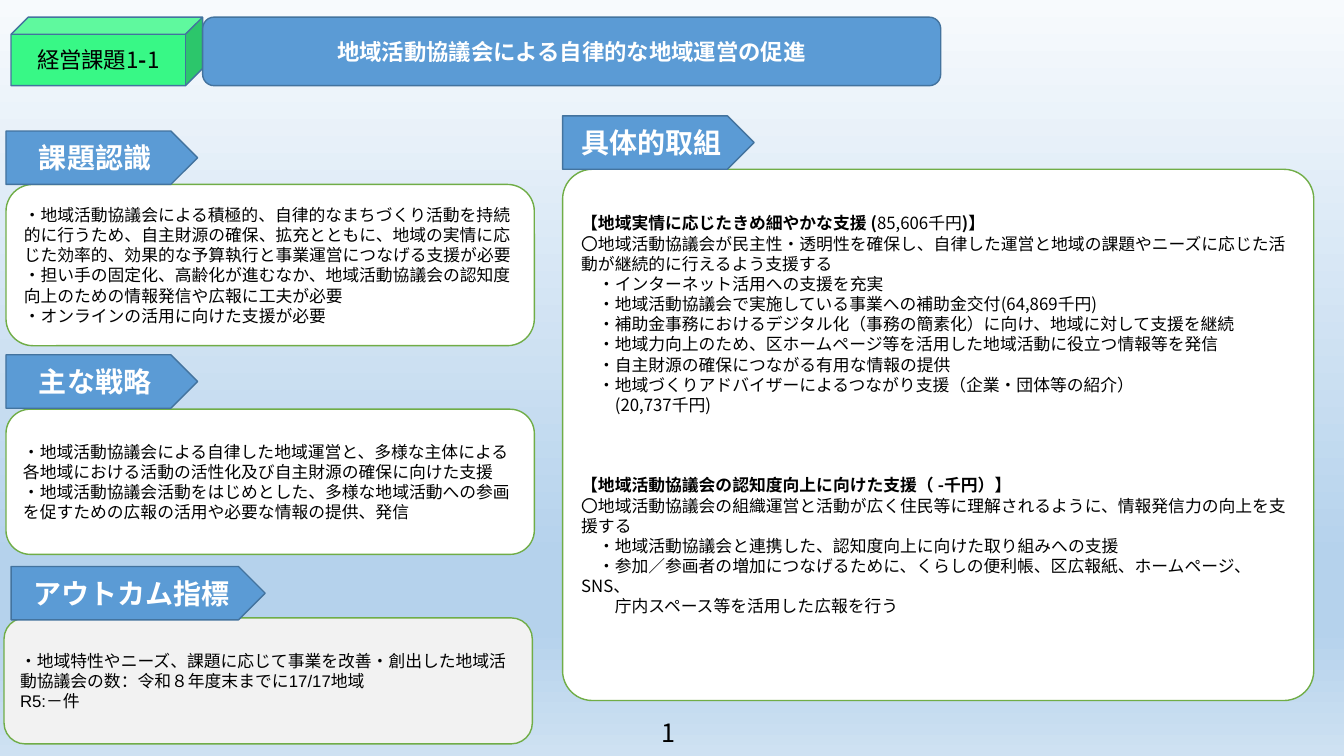
from copy import deepcopy

from pptx import Presentation
from pptx import util as u
from pptx.dml.color import RGBColor
from pptx.enum import shapes, text

WIDTH, HEIGHT = 13.33, 7.5
FONT = "Noto Sans CJK JP"
BLUE, NAVY, GREEN, WHITE, BLACK = "5B9BD5", "43739E", "70AD47", "FFFFFF", "000000"
BACKGROUND = [(0, "F7FAFD"), (74, "B5D2EC"), (83, "B5D2EC"), (100, "CEE1F2")]
LEFT_WIDTH, TAB_HEIGHT, BANNER_TOP, BANNER_HEIGHT = 5.24, 0.53, 0.17, 0.68
BODY_SIZE = 12
BLANK_LINE = 14.4

BADGE = "経営課題1*-*1"
TITLE = "*地域活動協議会による自律的な地域運営の促進*"
PAGE_NUMBER = "1"

ACTIONS = [
    ("*【地域実情に応じたきめ細やかな支援 (*85,606千円*)】*", 0),
    ("〇地域活動協議会が民主性・透明性を確保し、自律した運営と地域の課題やニーズに応じた活動が継続的に行えるよう支援する", 0),
    ("・インターネット活用への支援を充実", 1),
    ("・地域活動協議会で実施している事業への補助金交付(64,869千円)", 1),
    ("・補助金事務におけるデジタル化（事務の簡素化）に向け、地域に対して支援を継続", 1),
    ("・地域力向上のため、区ホームページ等を活用した地域活動に役立つ情報等を発信", 1),
    ("・自主財源の確保につながる有用な情報の提供", 1),
    ("・地域づくりアドバイザーによるつながり支援（企業・団体等の紹介）", 1),
    ("(20,737千円)", 2),
    ("*【地域活動協議会の認知度向上に向けた支援（ -千円）】*", 0, 3),
    ("〇地域活動協議会の組織運営と活動が広く住民等に理解されるように、情報発信力の向上を支援する", 0),
    ("・地域活動協議会と連携した、認知度向上に向けた取り組みへの支援", 1),
    ("・参加／参画者の増加につなげるために、くらしの便利帳、区広報紙、ホームページ、SNS、", 1),
    ("庁内スペース等を活用した広報を行う", 2),
]

SECTIONS = [
    dict(heading="*課題認識*", tab=(0.06, 1.3, 1.9), panel=(0.06, 1.83, LEFT_WIDTH, 1.6), lines=[
        ("・地域活動協議会による積極的、自律的なまちづくり活動を持続的に行うため、自主財源の確保、拡充とともに、地域の実情に応じた効率的、効果的な予算執行と事業運営につなげる支援が必要", 0),
        ("・担い手の固定化、高齢化が進むなか、地域活動協議会の認知度向上のための情報発信や広報に工夫が必要", 0),
        ("・オンラインの活用に向けた支援が必要", 0),
    ]),
    dict(heading="*主な戦略*", tab=(0.06, 3.52, 1.9), panel=(0.06, 4.06, LEFT_WIDTH, 1.44), lines=[
        ("・地域活動協議会による自律した地域運営と、多様な主体による各地域における活動の活性化及び自主財源の確保に向けた支援", 0),
        ("・地域活動協議会活動をはじめとした、多様な地域活動への参画を促すための広報の活用や必要な情報の提供、発信", 0),
    ]),
    dict(heading="*アウトカム指標*", tab=(0.11, 5.62, 2.52), panel=(0.04, 6.13, LEFT_WIDTH, 1.25),
         fill="F2F2F2", font="Arial", lines=[
        ("・地域特性やニーズ、課題に応じて事業を改善・創出した地域活動協議会の数：令和８年度末までに17/17地域", 0),
        ("R5:－件", 0),
    ]),
    dict(heading="*具体的取組*", tab=(5.58, 1.15, 1.9), panel=(5.58, 1.68, 7.45, 5.27),
         corner=0.056, blank_below=2, lines=ACTIONS),
]


def color(value):
    return RGBColor.from_string(value)


def write(shape, lines, size=BODY_SIZE, font=FONT, ink=BLACK, align=text.PP_ALIGN.LEFT,
          anchor=text.MSO_ANCHOR.MIDDLE, blank_below=0):
    frame = shape.text_frame
    frame.word_wrap = True
    frame.vertical_anchor = anchor
    frame.margin_bottom = u.Inches(0.05) + u.Pt(blank_below * BLANK_LINE)
    for index, (content, indent, *blank_above) in enumerate(lines):
        paragraph = frame.paragraphs[0] if index == 0 else frame.add_paragraph()
        paragraph.alignment = align
        if blank_above:
            paragraph.space_before = u.Pt(blank_above[0] * BLANK_LINE)
        if indent:
            properties = paragraph._p.get_or_add_pPr()
            properties.set("marL", "0")
            properties.set("indent", str(u.Pt(indent * size)))
        for part, words in enumerate(content.split("*")):
            if not words:
                continue
            run = paragraph.add_run()
            run.text = words
            run.font.size = u.Pt(size)
            run.font.bold = part % 2 == 1
            run.font.name = font
            run.font.color.rgb = color(ink)
            latin = run._r.rPr.find("{*}latin")
            east_asian = latin.makeelement(latin.tag.replace("latin", "ea"), {"typeface": font})
            latin.addnext(east_asian)


def add_box(slide, kind, place, fill, line, corner=None):
    shape = slide.shapes.add_shape(kind, *map(u.Inches, place))
    shape.shadow.inherit = False
    shape.fill.solid()
    shape.fill.fore_color.rgb = color(fill)
    shape.line.color.rgb = color(line)
    shape.line.width = u.Pt(1)
    if corner is not None:
        shape.adjustments[0] = corner
    return shape


def paint_background(slide):
    fill = slide.background.fill
    fill.gradient()
    fill.gradient_angle = 270
    stops = slide._element.find(".//{*}gsLst")
    first, last = list(stops)
    for _ in BACKGROUND[2:]:
        last.addprevious(deepcopy(first))
    for stop, (percent, value) in zip(fill.gradient_stops, BACKGROUND):
        stop.position = percent / 100
        stop.color.rgb = color(value)


def main():
    presentation = Presentation()
    presentation.slide_width = u.Inches(WIDTH)
    presentation.slide_height = u.Inches(HEIGHT)
    slide = presentation.slides.add_slide(presentation.slide_layouts[6])
    paint_background(slide)
    preset, center = shapes.MSO_SHAPE, text.PP_ALIGN.CENTER

    for section in SECTIONS:
        panel = add_box(slide, preset.ROUNDED_RECTANGLE, section["panel"],
                        section.get("fill", WHITE), GREEN, section.get("corner"))
        write(panel, section["lines"], font=section.get("font", FONT),
              blank_below=section.get("blank_below", 0))
        tab = add_box(slide, preset.PENTAGON, (*section["tab"], TAB_HEIGHT), BLUE, NAVY)
        write(tab, [(section["heading"], 0)], size=20, ink=WHITE, align=center)

    badge = add_box(slide, preset.CUBE, (0.11, BANNER_TOP, 1.9, BANNER_HEIGHT), "38F886", NAVY)
    write(badge, [(BADGE, 0)], size=16, align=center)
    banner = add_box(slide, preset.ROUNDED_RECTANGLE, (2.01, BANNER_TOP, 7.32, BANNER_HEIGHT), BLUE, NAVY)
    write(banner, [(TITLE, 0)], size=16, ink=WHITE, align=center)

    number = slide.shapes.add_textbox(*map(u.Inches, (6.46, 7.07, 0.48, 0.4)))
    write(number, [(PAGE_NUMBER, 0)], size=18, anchor=text.MSO_ANCHOR.TOP)
    presentation.save("out.pptx")


if __name__ == "__main__":
    main()
